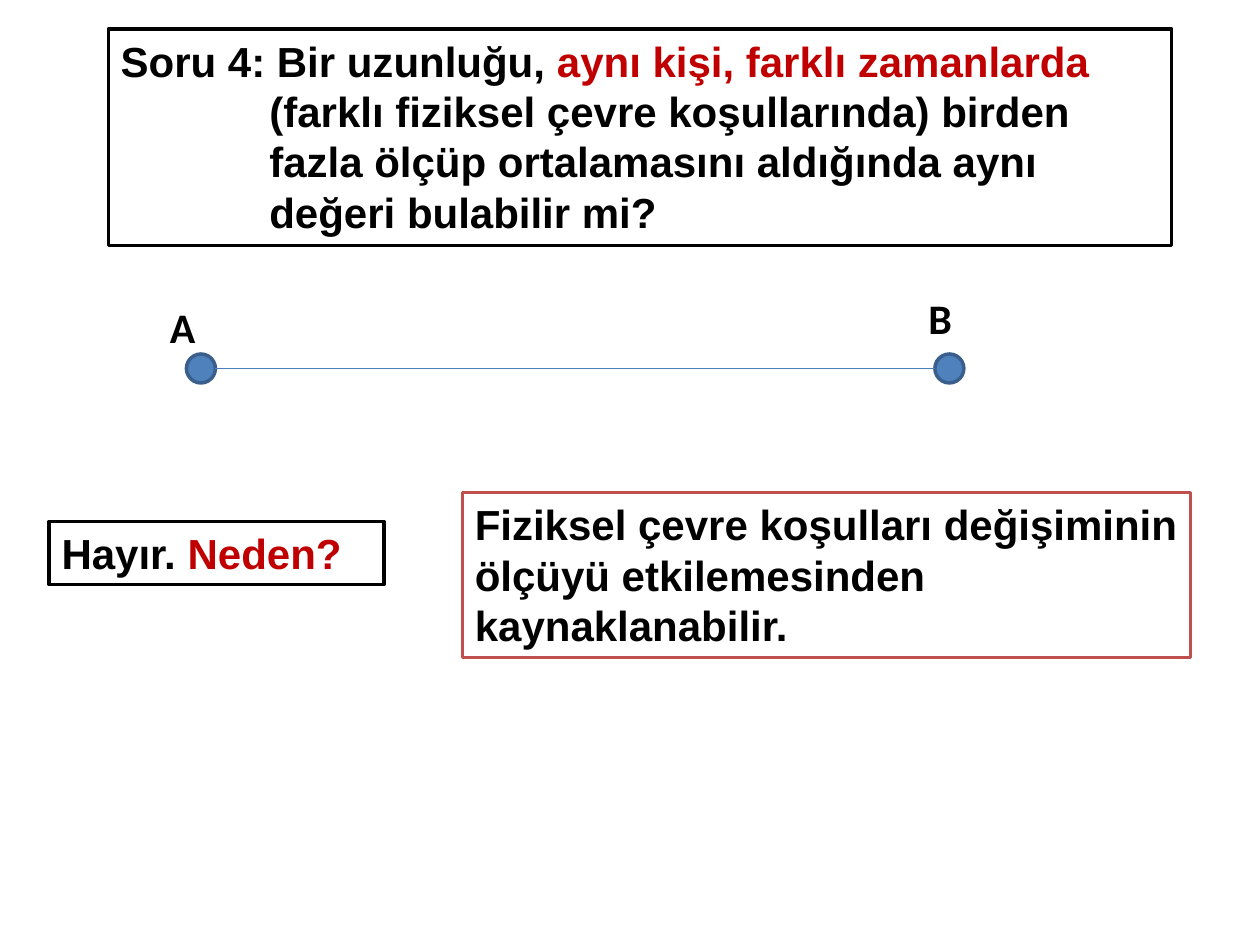
"""Build the question slide about measuring the length AB under changing conditions."""
from dataclasses import dataclass
from typing import Optional

from lxml.etree import SubElement
from pptx import Presentation
from pptx.dml.color import RGBColor
from pptx.enum.shapes import MSO_CONNECTOR, MSO_SHAPE
from pptx.enum.text import MSO_ANCHOR, MSO_AUTO_SIZE, PP_ALIGN
from pptx.oxml.ns import qn
from pptx.util import Inches, Pt

BLACK = RGBColor(0x00, 0x00, 0x00)
WHITE = RGBColor(0xFF, 0xFF, 0xFF)
RED = RGBColor(0xC0, 0x00, 0x00)
FRAME_RED = RGBColor(0xC0, 0x50, 0x4D)
BLUE = RGBColor(0x4F, 0x81, 0xBD)
DARK_BLUE = RGBColor(0x3A, 0x5F, 0x8C)
LINE_BLUE = RGBColor(0x4B, 0x7E, 0xBC)

WIDTH, HEIGHT = Inches(10), Inches(7.5)
COLS, ROWS = 100, 75
DOT = 2.3
DOT_ROW = 28.1
TEXT_FORMAT = {"size": Pt(24), "bold": True}


@dataclass(frozen=True)
class Area:
    col: float
    row: float
    cols: float
    rows: float

    def emu(self) -> tuple:
        return x(self.col), y(self.row), x(self.cols), y(self.rows)


@dataclass(frozen=True)
class Box:
    area: Area
    runs: tuple
    frame: RGBColor = BLACK
    hanging: Optional[float] = None


@dataclass(frozen=True)
class Endpoint:
    col: float
    name: str
    label: Area


BOXES = (
    Box(Area(8.6, 2.3, 84.4, 17.2),
        (("Soru 4: Bir uzunluğu, ", BLACK),
         ("aynı kişi, farklı zamanlarda ", RED),
         ("(farklı fiziksel çevre koşullarında) birden fazla ölçüp "
          "ortalamasını aldığında aynı değeri bulabilir mi?", BLACK)),
        hanging=11.8),
    Box(Area(3.9, 41.4, 26.6, 5), (("Hayır. ", BLACK), ("Neden?", RED))),
    Box(Area(36.7, 39.1, 57.8, 13.1),
        (("Fiziksel çevre koşulları değişiminin ölçüyü etkilemesinden "
          "kaynaklanabilir.", BLACK),),
        frame=FRAME_RED),
)
ENDPOINTS = (
    Endpoint(14.8, "A", Area(12.5, 23.4, 7.8, 5)),
    Endpoint(74.2, "B", Area(72.7, 22.7, 7.8, 5)),
)


def x(cols: float) -> int:
    """Turn grid columns into a length."""
    return round(WIDTH * cols / COLS)


def y(rows: float) -> int:
    """Turn grid rows into a length."""
    return round(HEIGHT * rows / ROWS)


def add_text(sp, runs: tuple, font: str, hanging: Optional[float] = None) -> None:
    """Write coloured runs into one left-aligned paragraph."""
    tf = sp.text_frame
    frame_format = {"word_wrap": True, "auto_size": MSO_AUTO_SIZE.SHAPE_TO_FIT_TEXT,
                    "vertical_anchor": MSO_ANCHOR.TOP}
    for key, value in frame_format.items():
        setattr(tf, key, value)
    p = tf.paragraphs[0]
    p.alignment = PP_ALIGN.LEFT
    if hanging:
        pPr = p._p.get_or_add_pPr()
        pPr.set("marL", str(x(hanging)))
        pPr.set("indent", str(-x(hanging)))
    for text, color in runs:
        r = p.add_run()
        r.text = text
        for key, value in {**TEXT_FORMAT, "name": font}.items():
            setattr(r.font, key, value)
        r.font.color.rgb = color


def add_outlined(s, kind: MSO_SHAPE, area: Area, fill: RGBColor, line: RGBColor):
    """Add a filled, outlined shape without a shadow."""
    sp = s.shapes.add_shape(kind, *area.emu())
    sp.shadow.inherit = False
    sp.fill.solid()
    sp.fill.fore_color.rgb = fill
    sp.line.color.rgb = line
    sp.line.width = Pt(2)
    return sp


def add_box(s, box: Box) -> None:
    """Add a framed text box."""
    sp = add_outlined(s, MSO_SHAPE.RECTANGLE, box.area, WHITE, box.frame)
    add_text(sp, box.runs, "Arial", box.hanging)


def add_endpoint(s, end: Endpoint) -> None:
    """Add a dot with its letter."""
    add_outlined(s, MSO_SHAPE.FLOWCHART_CONNECTOR,
                 Area(end.col, DOT_ROW, DOT, DOT), BLUE, DARK_BLUE)
    add_text(s.shapes.add_textbox(*end.label.emu()), ((end.name, BLACK),), "Calibri")


def add_segment(s, start: Endpoint, end: Endpoint) -> None:
    """Draw the measured length between two dots."""
    middle = y(DOT_ROW + DOT / 2)
    cx = s.shapes.add_connector(MSO_CONNECTOR.STRAIGHT, x(start.col + DOT), middle,
                                x(end.col), middle)
    cx.line.color.rgb = LINE_BLUE
    cx.line.width = Pt(0.75)
    SubElement(cx._element.spPr, qn("a:effectLst"))


def main() -> None:
    """Create and save the slide."""
    prs = Presentation()
    prs.slide_width, prs.slide_height = WIDTH, HEIGHT
    s = prs.slides.add_slide(prs.slide_layouts[6])
    for end in ENDPOINTS:
        add_endpoint(s, end)
    add_segment(s, *ENDPOINTS)
    for box in BOXES:
        add_box(s, box)
    prs.save("out.pptx")


if __name__ == "__main__":
    main()
